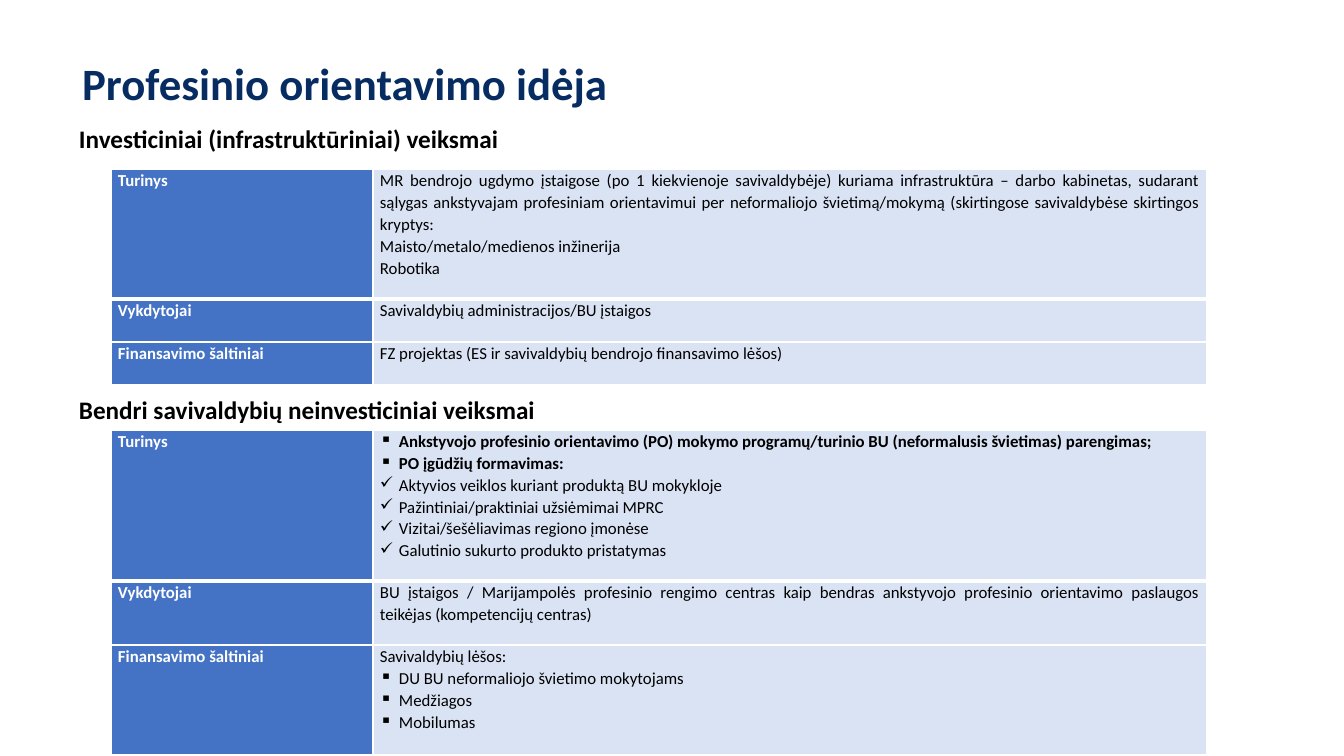
from lxml.etree import SubElement
from pptx import Presentation
from pptx.dml.color import RGBColor
from pptx.enum.text import MSO_ANCHOR, MSO_AUTO_SIZE, PP_ALIGN
from pptx.oxml import parse_xml
from pptx.oxml.ns import nsdecls, qn
from pptx.util import Pt

SCALE = 914400 / 100.8
SQUARE, CHECK = "▪", "✓"


def px(length):
    return round(length * SCALE)


def add_run(paragraph, text, size, color, bold):
    run = paragraph.add_run()
    run.text = text
    run.font.name = "Calibri"
    run.font.size = Pt(size)
    run.font.bold = bold
    run.font.color.rgb = RGBColor.from_string(color)


presentation = Presentation()
presentation.slide_width = px(1344)
presentation.slide_height = px(756)
slide = presentation.slides.add_slide(presentation.slide_layouts[5])

title = slide.shapes.title
title.left, title.top, title.width, title.height = px(69), px(49), px(1233), px(68)
title_frame = title.text_frame
title_frame.auto_size = MSO_AUTO_SIZE.NONE
title_frame.vertical_anchor = MSO_ANCHOR.MIDDLE
title_frame.margin_left = title_frame.margin_right = px(13)
title_frame.margin_top = title_frame.margin_bottom = px(7)
title_frame.paragraphs[0].alignment = PP_ALIGN.LEFT
add_run(title_frame.paragraphs[0], "Profesinio orientavimo idėja", 32, "072C62", True)

sections = [
    ("Investiciniai (infrastruktūriniai) veiksmai", 118, 169, [
        ("Turinys", 130, [
            ("", False, "MR bendrojo ugdymo įstaigose (po 1 kiekvienoje savivaldybėje) kuriama "
             "infrastruktūra – darbo kabinetas, sudarant sąlygas ankstyvajam profesiniam "
             "orientavimui per neformaliojo švietimą/mokymą (skirtingose savivaldybėse "
             "skirtingos kryptys:"),
            ("", False, "Maisto/metalo/medienos inžinerija"),
            ("", False, "Robotika"),
        ]),
        ("Vykdytojai", 43, [("", False, "Savivaldybių administracijos/BU įstaigos")]),
        ("Finansavimo šaltiniai", 43, [
            ("", False, "FZ projektas (ES ir savivaldybių bendrojo finansavimo lėšos)"),
        ]),
    ]),
    ("Bendri savivaldybių neinvesticiniai veiksmai", 389, 430, [
        ("Turinys", 151, [
            (SQUARE, True, "Ankstyvojo profesinio orientavimo (PO) mokymo programų/turinio BU "
             "(neformalusis švietimas) parengimas;"),
            (SQUARE, True, "PO įgūdžių formavimas:"),
            (CHECK, False, "Aktyvios veiklos kuriant produktą BU mokykloje"),
            (CHECK, False, "Pažintiniai/praktiniai užsiėmimai MPRC"),
            (CHECK, False, "Vizitai/šešėliavimas regiono įmonėse"),
            (CHECK, False, "Galutinio sukurto produkto pristatymas"),
        ]),
        ("Vykdytojai", 64, [
            ("", False, "BU įstaigos / Marijampolės profesinio rengimo centras kaip bendras "
             "ankstyvojo profesinio orientavimo paslaugos teikėjas (kompetencijų centras)"),
        ]),
        ("Finansavimo šaltiniai", 110, [
            ("", False, "Savivaldybių lėšos:"),
            (SQUARE, False, "DU BU neformaliojo švietimo mokytojams"),
            (SQUARE, False, "Medžiagos"),
            (SQUARE, False, "Mobilumas"),
        ]),
    ]),
]

for heading, heading_top, table_top, rows in sections:
    heading_box = slide.shapes.add_textbox(px(69), px(heading_top), px(480), px(40))
    heading_box.text_frame.word_wrap = True
    add_run(heading_box.text_frame.paragraphs[0], heading, 18, "000000", True)

    table_height = sum(height for _, height, _ in rows)
    table = slide.shapes.add_table(
        len(rows), 2, px(111), px(table_top), px(1096), px(table_height)).table
    table.first_row = table.horz_banding = False
    table.columns[0].width, table.columns[1].width = px(262), px(834)

    for row_index, (label, height, content) in enumerate(rows):
        table.rows[row_index].height = px(height)
        label_lines = [("", True, label)]
        columns = [(label_lines, "4472C4", "FFFFFF"), (content, "DAE3F3", "000000")]
        for column_index, (lines, fill_color, text_color) in enumerate(columns):
            cell = table.cell(row_index, column_index)
            cell.margin_left = cell.margin_right = px(7)
            cell.margin_top = cell.margin_bottom = 0
            cell.fill.solid()
            cell.fill.fore_color.rgb = RGBColor.from_string(fill_color)

            widths = {
                "lnL": 1, "lnR": 1,
                "lnT": 3 if row_index == 1 else 1,
                "lnB": 3 if row_index == 0 else 1,
            }
            for position, (side, width) in enumerate(widths.items()):
                border = parse_xml(
                    f'<a:{side} {nsdecls("a")} w="{Pt(width)}"><a:solidFill>'
                    f'<a:srgbClr val="FFFFFF"/></a:solidFill></a:{side}>')
                cell._tc.get_or_add_tcPr().insert(position, border)

            for line_index, (bullet, bold, text) in enumerate(lines):
                frame = cell.text_frame
                paragraph = frame.add_paragraph() if line_index else frame.paragraphs[0]
                paragraph.alignment = PP_ALIGN.JUSTIFY
                paragraph.line_spacing = 1.07
                add_run(paragraph, text, 12, text_color, bold)
                if bullet:
                    properties = paragraph._p.get_or_add_pPr()
                    properties.set("marL", str(px(19)))
                    properties.set("indent", str(px(-19)))
                    SubElement(properties, qn("a:buChar")).set("char", bullet)

presentation.save("out.pptx")
